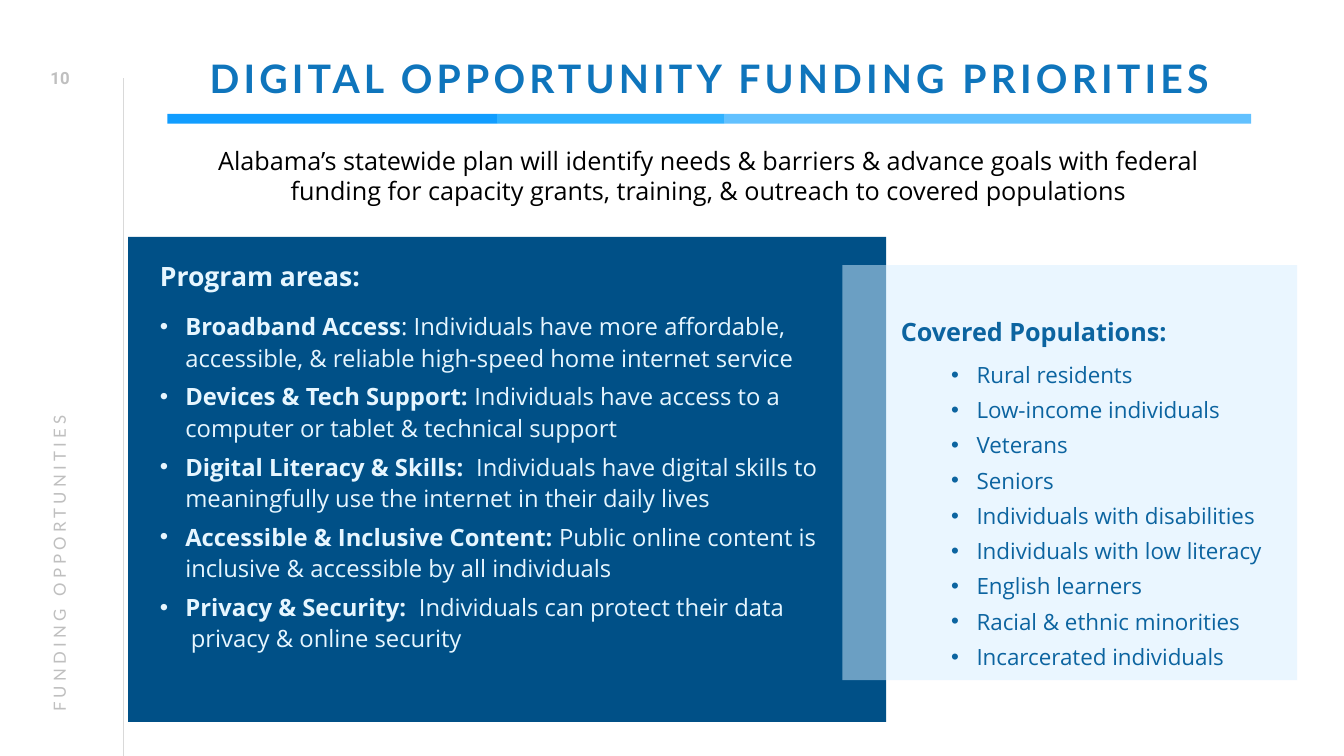
from lxml import etree
from pptx import Presentation
from pptx import util as u
from pptx.dml.color import RGBColor
from pptx.enum import shapes, text
from pptx.oxml.ns import qn

HUES = {
    "rule": "D9D9D9", "bar1": "119DFF", "bar2": "31B2FF", "bar3": "62C1FF",
    "title": "0F75BC", "muted": "BFBFBF", "lead": "000000", "panel": "005087",
    "glass": "D6EFFF", "pale": "E6F6FF", "deep": "0C64A0",
}
AREAS = [
    ("Broadband Access", ": Individuals have more affordable, accessible, "
     "& reliable high-speed home internet service"),
    ("Devices & Tech Support: ", "Individuals have access to a computer or "
     "tablet & technical support"),
    ("Digital Literacy & Skills:  ", "Individuals have digital skills to "
     "meaningfully use the internet in their daily lives"),
    ("Accessible & Inclusive Content: ", "Public online content is inclusive "
     "& accessible by all individuals"),
    ("Privacy & Security:  ", "Individuals can protect their data"),
]
GROUPS = [
    "Rural residents", "Low-income individuals", "Veterans", "Seniors",
    "Individuals with disabilities", "Individuals with low literacy",
    "English learners", "Racial & ethnic minorities",
    "Incarcerated individuals",
]
MID = text.PP_ALIGN.CENTER


def rgb(hue):
    return RGBColor.from_string(HUES[hue])


def place(shape, box):
    shape.left, shape.top, shape.width, shape.height = map(u.Cm, box)


def frame(shape, inset=(0.25, 0.13, 0.25, 0.13), anchor=text.MSO_ANCHOR.TOP):
    body = shape.text_frame
    body.word_wrap = True
    body.auto_size = text.MSO_AUTO_SIZE.NONE
    body.vertical_anchor = anchor
    (body.margin_left, body.margin_top,
     body.margin_right, body.margin_bottom) = map(u.Cm, inset)
    return body


def write(para, parts, face, size, hue, bold=None, align=text.PP_ALIGN.LEFT,
          line=1.0, before=0, after=0, indent=0, hang=0, level=0, track=None):
    para.alignment, para.line_spacing, para.level = align, line, level
    para.space_before, para.space_after = u.Pt(before), u.Pt(after)
    props = para._p.get_or_add_pPr()
    props.set("marL", str(u.Cm(indent)))
    props.set("indent", str(-u.Cm(hang)))
    if hang:
        etree.SubElement(props, qn("a:buFont")).set("typeface", "Arial")
        etree.SubElement(props, qn("a:buChar")).set("char", "•")
    else:
        etree.SubElement(props, qn("a:buNone"))
    font = para.font
    font.name, font.size, font.bold = face, u.Pt(size), bold
    font.color.rgb = rgb(hue)
    for words, strong in parts:
        run = para.add_run()
        run.text = words
        if strong is not None:
            run.font.bold = strong
        if track:
            run._r.get_or_add_rPr().set("spc", str(track * 100))


def label(slide, box, words, face, size, hue, turn=0,
          anchor=text.MSO_ANCHOR.MIDDLE, **look):
    shape = slide.shapes.add_textbox(*map(u.Cm, box))
    shape.rotation = turn
    write(frame(shape, anchor=anchor).paragraphs[0], [(words, None)],
          face, size, hue, **look)


def block(slide, box, hue, alpha=None):
    shape = slide.shapes.add_shape(shapes.MSO_SHAPE.RECTANGLE,
                                   *map(u.Cm, box))
    shape.shadow.inherit = False
    shape.fill.solid()
    shape.fill.fore_color.rgb = rgb(hue)
    shape.line.fill.background()
    if alpha:
        tint = shape._element.spPr.find(".//" + qn("a:srgbClr"))
        etree.SubElement(tint, qn("a:alpha")).set("val", str(alpha * 1000))


def rule(slide, start, end):
    line = slide.shapes.add_connector(shapes.MSO_CONNECTOR.STRAIGHT,
                                      *map(u.Cm, start + end))
    line.line.color.rgb = rgb("rule")
    line.line.width = u.Pt(0.5)
    etree.SubElement(line._element.spPr, qn("a:effectLst"))


def front(slide, holder, box):
    place(holder, box)
    slide.shapes._spTree.append(holder._element)


def areas(slide, holder):
    front(slide, holder, (3.78, 6.5, 17.55, 11.18))
    body = frame(holder)
    write(body.paragraphs[0], [("Program areas:", None)], "Open Sans", 19,
          "pale", bold=True, line=0.9, before=6, after=12.4)
    for head, rest in AREAS:
        last = head == AREAS[-1][0]
        write(body.add_paragraph(), [(head, True), (rest, False)],
              "Open Sans", 17, "pale", line=1.1, after=0 if last else 5.2,
              indent=0.64, hang=0.64)
    write(body.add_paragraph(), [("privacy & online security", None)],
          "Open Sans", 17, "pale", bold=False, line=1.1, indent=0.78)


def groups(slide, holder):
    front(slide, holder, (22.45, 7.85, 10.26, 9.93))
    body = frame(holder)
    write(body.paragraphs[0], [("Covered Populations:", None)], "Open Sans",
          18, "deep", bold=True, before=6, after=10)
    for group in GROUPS:
        write(body.add_paragraph(), [(group, None)], "Open Sans", 16, "deep",
              bold=False, after=6, indent=1.91, hang=0.64, level=1)


def main():
    deck = Presentation()
    deck.slide_width, deck.slide_height = u.Cm(33.87), u.Cm(19.05)
    slide = deck.slides.add_slide(deck.slide_layouts[3])
    title, left, right = slide.placeholders

    rule(slide, (3.1, 19.05), (3.1, 1.96))
    edge = 4.22
    for hue, width in (("bar1", 8.31), ("bar2", 5.72), ("bar3", 13.28)):
        block(slide, (edge, 2.87, width, 0.25), hue)
        edge += width

    front(slide, title, (4.22, 1.02, 27.33, 1.9))
    write(frame(title, (0, 0.13, 0, 0), text.MSO_ANCHOR.MIDDLE).paragraphs[0],
          [("DIGITAL OPPORTUNITY FUNDING PRIORITIES", None)], "Lato", 28,
          "title", bold=True, align=MID, line=0.9, track=3)
    label(slide, (-6.15, 10.03, 15.29, 1.02), "FUNDING OPPORTUNITIES",
          "Lato", 12, "muted", turn=270, track=3)
    label(slide, (0.69, 1.45, 1.65, 1.02), "10", "Roboto", 12, "muted",
          bold=True, align=MID)
    label(slide, (4.19, 3.53, 27.33, 1.8),
          "Alabama’s statewide plan will identify needs & barriers & advance "
          "goals with federal funding for capacity grants, training, & "
          "outreach to covered populations", "Open Sans", 18, "lead",
          anchor=text.MSO_ANCHOR.TOP, align=MID)

    block(slide, (3.23, 5.97, 19.1, 12.22), "panel")
    block(slide, (21.23, 6.68, 11.46, 10.46), "glass", alpha=50)
    areas(slide, left)
    groups(slide, right)
    deck.save("out.pptx")


if __name__ == "__main__":
    main()
